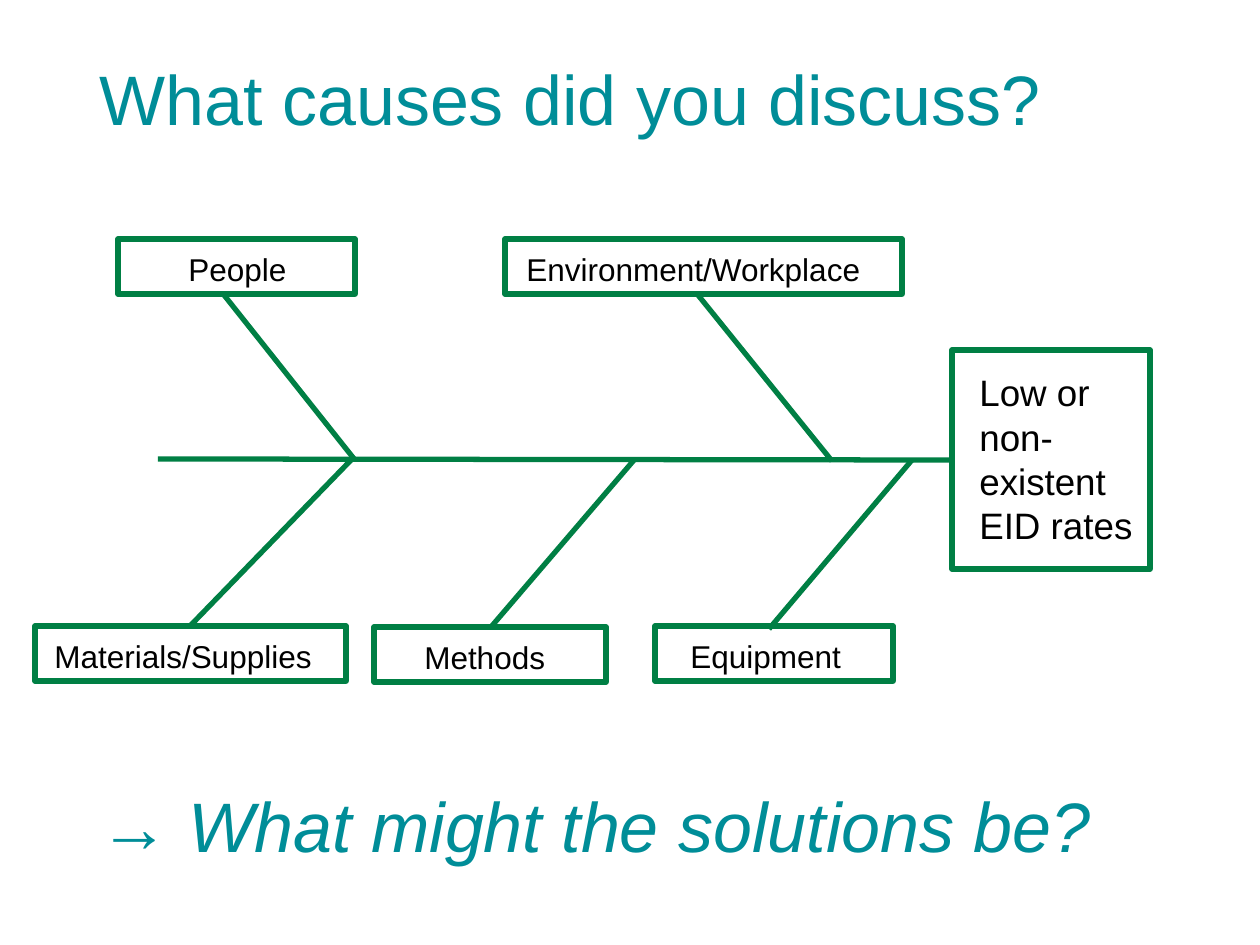
from lxml import etree
from pptx import Presentation
from pptx.dml.color import RGBColor
from pptx.enum.shapes import MSO_CONNECTOR, MSO_SHAPE
from pptx.enum.text import MSO_ANCHOR, MSO_AUTO_SIZE, PP_ALIGN
from pptx.oxml.ns import qn
from pptx.util import Pt

STRAIGHT = MSO_CONNECTOR.STRAIGHT
RECT = MSO_SHAPE.RECTANGLE
TOP, MIDDLE = MSO_ANCHOR.TOP, MSO_ANCHOR.MIDDLE
LEFT = PP_ALIGN.LEFT
NO_FIT, GROW = MSO_AUTO_SIZE.NONE, MSO_AUTO_SIZE.SHAPE_TO_FIT_TEXT

PX = 914400 / 126
COLORS = {"teal": "008D98", "green": "007F44", "black": "000000"}

TITLE = "What causes did you discuss?"
CLOSING = "→ What might the solutions be?"
EFFECT = "Low or non-existent\nEID rates"

# Text, box left, top, width; label left, width
CAUSES = [
    ("People", 118, 239, 237, 176, 144),
    ("Environment/Workplace", 505, 239, 397, 514, 378),
    ("Materials/Supplies", 35, 626, 311, 42, 302),
    ("Methods", 374, 627, 232, 412, 174),
    ("Equipment", 655, 626, 238, 678, 195),
]
BOX_H, LABEL_H, LABEL_DROP = 55, 89, 5

# Start x, y; end x, y
SPINE = (952, 460, 158, 459)
BONES = [
    (224, 295, 355, 460),
    (698, 295, 832, 461),
    (354, 457, 190, 626),
    (635, 459, 491, 627),
    (912, 460, 769, 629),
]


def emu(*sizes):
    return [round(n * PX) for n in sizes]


def color(name):
    return RGBColor.from_string(COLORS[name])


def outline(line):
    line.color.rgb = color("green")
    line.width = Pt(3)


def write(shape, text, size, ink, anchor=TOP, fit=GROW, italic=None, spacing=None):
    frame = shape.text_frame
    frame.text = text
    frame.word_wrap = True
    frame.auto_size = fit
    frame.vertical_anchor = anchor
    for para in frame.paragraphs:
        para.alignment = LEFT
        para.line_spacing = spacing
        for run in para.runs:
            font = run.font
            font.name, font.size, font.italic = "Arial", Pt(size), italic
            font.color.rgb = color(ink)


def headline(shape, text, italic=None):
    write(shape, text, 40, "teal", MIDDLE, NO_FIT, italic, 0.9)


def add_box(shapes, *place):
    box = shapes.add_shape(RECT, *emu(*place))
    box.shadow.inherit = False
    box.fill.background()
    outline(box.line)


def add_line(shapes, ends):
    line = shapes.add_connector(STRAIGHT, *emu(*ends))
    outline(line.line)
    etree.SubElement(line._element.spPr, qn("a:effectLst"))


def add_cause(shapes, text, x, y, width, label_x, label_w):
    group = shapes.add_group_shape().shapes
    add_box(group, x, y, width, BOX_H)
    label = group.add_textbox(*emu(label_x, y + LABEL_DROP, label_w, LABEL_H))
    write(label, text, 18, "black")


def main():
    deck = Presentation()
    deck.slide_width, deck.slide_height = emu(1260, 945)
    slide = deck.slides.add_slide(deck.slide_layouts[5])
    shapes = slide.shapes

    title = shapes.title
    title.left, title.top, title.width, title.height = emu(87, 50, 1086, 106)
    headline(title, TITLE)

    add_box(shapes, 952, 350, 198, 219)
    add_line(shapes, SPINE)
    for cause in CAUSES:
        add_cause(shapes, *cause)
    for bone in BONES:
        add_line(shapes, bone)

    effect = shapes.add_textbox(*emu(967, 364, 188, 190))
    write(effect, EFFECT, 21, "black")
    closing = shapes.add_textbox(*emu(87, 777, 1086, 106))
    headline(closing, CLOSING, italic=True)

    deck.save("out.pptx")


if __name__ == "__main__":
    main()
